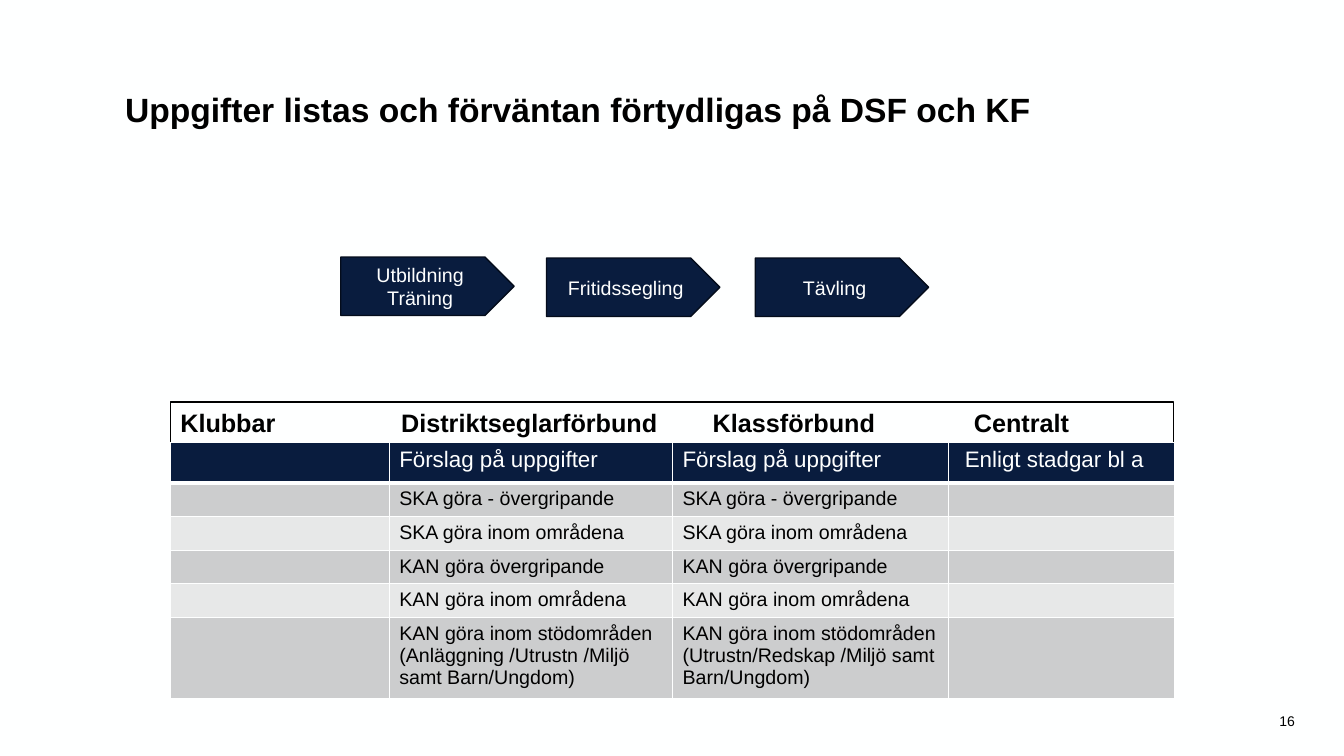
from lxml import etree
from pptx import Presentation
from pptx.dml.color import RGBColor
from pptx.enum.shapes import MSO_SHAPE as SHAPE
from pptx.enum.text import MSO_ANCHOR as ANCHOR, PP_ALIGN as ALIGN
from pptx.oxml.ns import qn
from pptx.util import Inches, Pt

WHITE, BLACK, NAVY, EDGE = "FEFFFF", "000000", "091C3E", "040C1B"
BANDS = ["CCCDCE", "E7E8E8"]

TITLE = "Uppgifter listas och förväntan förtydligas på DSF och KF"
PAGE = "16"
ARROWS = [  # left, top, lines
    (3.38, 2.55, ["Utbildning", "Träning"]),
    (5.42, 2.56, ["Fritidssegling"]),
    (7.49, 2.56, ["Tävling"]),
]
HEADINGS = ["Klubbar", "Distriktseglarförbund", "Klassförbund", "Centralt"]
HEADING_TABS = [2.19, 5.28, 7.87]
ROWS = [
    ["", "Förslag på uppgifter", "Förslag på uppgifter", "Enligt stadgar bl a"],
    ["", "SKA göra - övergripande", "SKA göra - övergripande", ""],
    ["", "SKA göra inom områdena", "SKA göra inom områdena", ""],
    ["", "KAN göra övergripande", "KAN göra övergripande", ""],
    ["", "KAN göra inom områdena", "KAN göra inom områdena", ""],
    ["", "KAN göra inom stödområden (Anläggning /Utrustn /Miljö samt Barn/Ungdom)",
     "KAN göra inom stödområden (Utrustn/Redskap /Miljö samt Barn/Ungdom)", ""],
]
COL_WIDTHS = [2.17, 2.81, 2.74, 2.24]
ROW_HEIGHTS = [0.4] + [0.33] * 4 + [0.81]
TABLE_LEFT, HEADING_TOP, TABLE_TOP, TABLE_WIDTH = 1.69, 3.99, 4.39, 9.95


def rgb(value):
    return RGBColor.from_string(value)


def write(tf, lines, size, color, bold=False, align=ALIGN.LEFT):
    for i, line in enumerate(lines):
        p = tf.paragraphs[0] if i == 0 else tf.add_paragraph()
        p.alignment = align
        r = p.add_run()
        r.text = line
        for name, value in dict(name="Arial", size=Pt(size), bold=bold).items():
            setattr(r.font, name, value)
        r.font.color.rgb = rgb(color)


def add_text(box, text, size, bold=False, align=ALIGN.LEFT, margin=None):
    tf = s.shapes.add_textbox(*map(Inches, box)).text_frame
    tf.word_wrap, tf.vertical_anchor = True, ANCHOR.MIDDLE
    if margin is not None:
        for side in ("left", "right", "top", "bottom"):
            setattr(tf, "margin_" + side, margin)
    write(tf, [text], size, BLACK, bold, align)


def add_shape(kind, box, line, fill=None):
    sp = s.shapes.add_shape(kind, *map(Inches, box))
    sp.shadow.inherit = False
    if fill:
        sp.fill.solid()
        sp.fill.fore_color.rgb = rgb(fill)
    else:
        sp.fill.background()
    sp.line.color.rgb = rgb(line)
    sp.line.width = Pt(1)
    sp.text_frame.word_wrap = True
    return sp


def set_borders(cell, widths):
    """Draw white cell borders; widths maps side letters to points."""
    tc_pr = cell._tc.get_or_add_tcPr()
    for i, (side, width) in enumerate(widths.items()):
        ln = etree.Element(qn("a:ln" + side), w=str(Pt(width)))
        fill = etree.SubElement(ln, qn("a:solidFill"))
        etree.SubElement(fill, qn("a:srgbClr"), val=WHITE)
        tc_pr.insert(i, ln)


def add_headings():
    sp = add_shape(SHAPE.RECTANGLE, (TABLE_LEFT, HEADING_TOP, TABLE_WIDTH, 0.4), BLACK)
    tf = sp.text_frame
    tf.vertical_anchor = ANCHOR.TOP
    tabs = etree.SubElement(tf.paragraphs[0]._p.get_or_add_pPr(), qn("a:tabLst"))
    for pos in HEADING_TABS:
        etree.SubElement(tabs, qn("a:tab"), pos=str(Inches(pos)), algn="l")
    write(tf, ["\t".join(HEADINGS)], 18, BLACK, bold=True)


def add_tasks():
    table = s.shapes.add_table(
        len(ROWS), len(COL_WIDTHS), Inches(TABLE_LEFT), Inches(TABLE_TOP),
        Inches(TABLE_WIDTH), Inches(sum(ROW_HEIGHTS))).table
    for col, width in zip(table.columns, COL_WIDTHS):
        col.width = Inches(width)
    for i, (row, height) in enumerate(zip(ROWS, ROW_HEIGHTS)):
        table.rows[i].height = Inches(height)
        head = i == 0
        size = 16 if head else 14
        for j, text in enumerate(row):
            cell = table.cell(i, j)
            cell.fill.solid()
            cell.fill.fore_color.rgb = rgb(NAVY if head else BANDS[(i - 1) % 2])
            set_borders(cell, dict(L=1, R=1, T=3 if i == 1 else 1, B=3 if head else 1))
            if text:
                write(cell.text_frame, [text], size, WHITE if head else BLACK)
            else:
                etree.SubElement(cell.text_frame.paragraphs[0]._p,
                                 qn("a:endParaRPr"), sz=str(size * 100))
    table.cell(0, 3).margin_left = Inches(0.16)


prs = Presentation()
prs.slide_width, prs.slide_height = Inches(13.33), Inches(7.5)
s = prs.slides.add_slide(prs.slide_layouts[6])
s.background.fill.solid()
s.background.fill.fore_color.rgb = rgb(WHITE)

add_text((9.94, 6.95, 3, 0.4), PAGE, 10, align=ALIGN.RIGHT)
add_text((1.24, 0.63, 10.85, 0.9), TITLE, 24, bold=True, margin=0)
add_headings()
for left, top, lines in ARROWS:
    arrow = add_shape(SHAPE.PENTAGON, (left, top, 1.72, 0.58), EDGE, NAVY)
    arrow.text_frame.vertical_anchor = ANCHOR.MIDDLE
    write(arrow.text_frame, lines, 14, WHITE, align=ALIGN.CENTER)
add_tasks()
prs.save("out.pptx")
